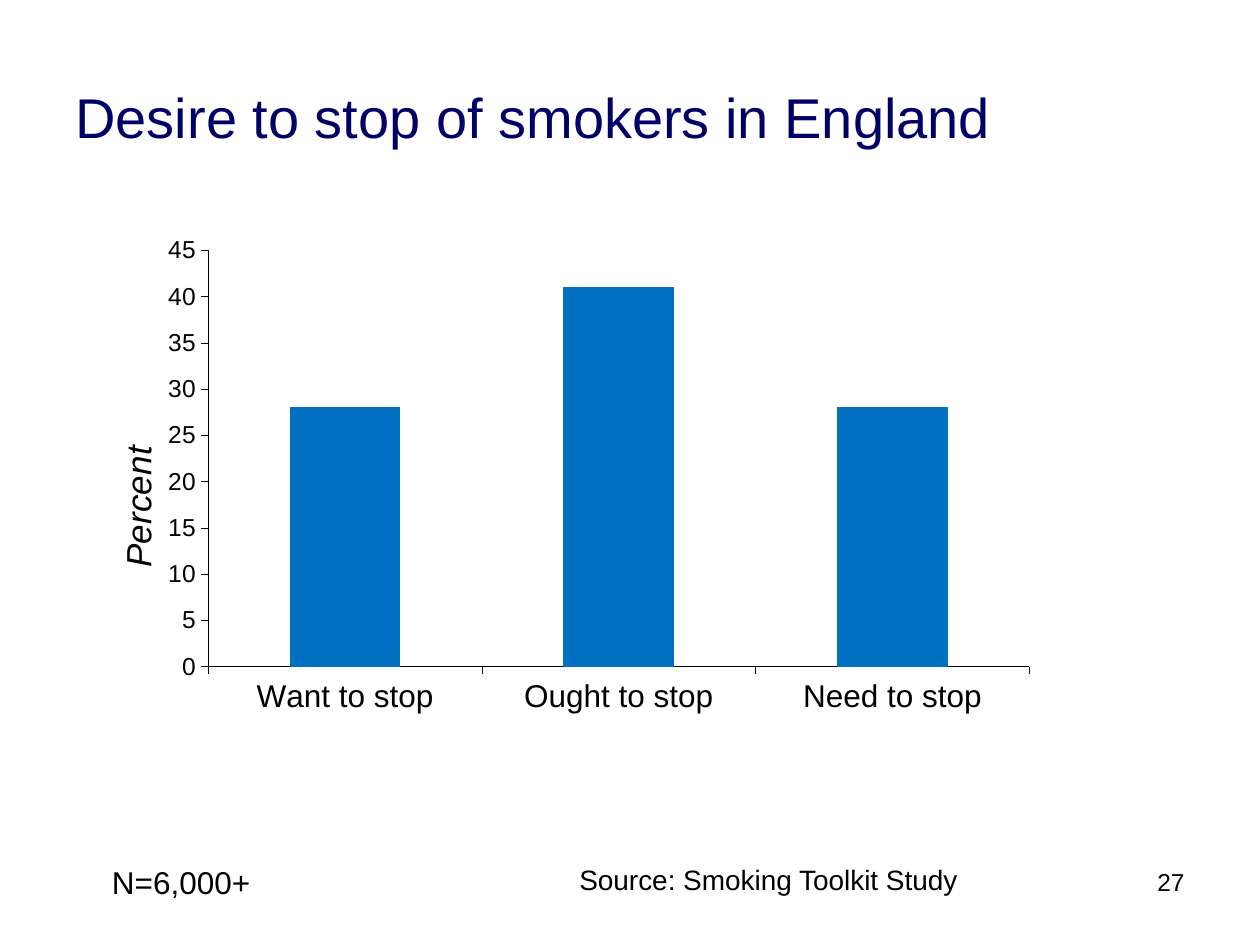
from dataclasses import dataclass

from lxml import etree
from pptx import Presentation
from pptx import util as u
from pptx.chart.data import CategoryChartData
from pptx.dml.color import RGBColor
from pptx.enum import chart as ch
from pptx.enum import text as tx
from pptx.oxml.ns import qn

HUES = {"ink": "000000", "navy": "000066", "bar": "0070C0"}
FACE = "Arial"


@dataclass
class Label:
    """A line of text with its box and style."""
    words: str
    box: tuple[float, float, float, float]
    size: float
    hue: str = "ink"
    align: tx.PP_ALIGN = tx.PP_ALIGN.LEFT
    anchor: tx.MSO_ANCHOR = tx.MSO_ANCHOR.TOP
    wrap: bool = False


LABELS = [
    Label("Desire to stop of smokers in England", (0.5, 0.3, 9.08, 1.25), 32,
          "navy", anchor=tx.MSO_ANCHOR.MIDDLE, wrap=True),
    Label("N=6,000+", (0.79, 6.8, 1.31, 0.4), 18),
    Label("Source: Smoking Toolkit Study", (4.5, 6.8, 3.24, 0.37), 16),
    Label("27", (6.73, 6.83, 2.77, 0.52), 14, align=tx.PP_ALIGN.RIGHT, wrap=True),
]


def color(hue: str) -> RGBColor:
    """Return the named colour."""
    return RGBColor.from_string(HUES[hue])


def style(font, size: float, hue: str = "ink", slant: bool = False) -> None:
    """Set face, size, colour and slant of a font."""
    font.name, font.size = FACE, u.Pt(size)
    font.bold, font.italic = False, slant
    font.color.rgb = color(hue)


def write(slide, label: Label) -> None:
    """Draw one label as a text box."""
    frame = slide.shapes.add_textbox(*map(u.Inches, label.box)).text_frame
    frame.word_wrap = label.wrap
    frame.vertical_anchor = label.anchor
    para = frame.paragraphs[0]
    para.alignment = label.align
    run = para.add_run()
    run.text = label.words
    style(run.font, label.size, label.hue)


def place(owner, index: int, **parts) -> None:
    """Give a chart part a manual layout."""
    old = owner.find(qn("c:layout"))
    if old is not None:
        owner.remove(old)
    layout = etree.Element(qn("c:layout"))
    manual = etree.SubElement(layout, qn("c:manualLayout"))
    for tag, val in parts.items():
        etree.SubElement(manual, qn(f"c:{tag}")).set("val", str(val))
    owner.insert(index, layout)


def rule(axis, size: float) -> None:
    """Style an axis line, its ticks and its labels."""
    axis.has_major_gridlines = False
    axis.major_tick_mark = ch.XL_TICK_MARK.OUTSIDE
    axis.minor_tick_mark = ch.XL_TICK_MARK.NONE
    axis.format.line.color.rgb = color("ink")
    axis.format.line.width = u.Pt(0.17)
    style(axis.tick_labels.font, size)


def plot(slide) -> None:
    """Draw the column chart."""
    data = CategoryChartData()
    data.categories = ["Want to stop", "Ought to stop", "Need to stop"]
    data.add_series("Series 1", (28, 41, 28))
    box = map(u.Inches, (0.79, 1.73, 7.85, 4.29))
    chart = slide.shapes.add_chart(ch.XL_CHART_TYPE.COLUMN_CLUSTERED, *box, data).chart
    chart.has_legend = chart.has_title = False
    style(chart.font, 12.6)
    bars = chart.plots[0]
    bars.gap_width = 150
    bars.vary_by_categories = False
    form = bars.series[0].format
    form.fill.solid()
    form.fill.fore_color.rgb = form.line.color.rgb = color("bar")
    form.line.width = u.Pt(0.7)
    rule(chart.category_axis, 18)
    axis = chart.value_axis
    rule(axis, 14)
    axis.minimum_scale, axis.maximum_scale, axis.major_unit = 0, 45, 5
    run = axis.axis_title.text_frame.paragraphs[0].add_run()
    run.text = "Percent"
    style(run.font, 20, slant=True)
    place(axis.axis_title._element, 1, xMode="edge", yMode="edge", x=0.01, y=0.41)
    area = chart._chartSpace.find(".//" + qn("c:plotArea"))
    place(area, 0, layoutTarget="inner", xMode="edge", yMode="edge",
          x=0.11, y=0.06, w=0.83, h=0.77)


def main() -> None:
    """Build the slide and save it."""
    deck = Presentation()
    deck.slide_width, deck.slide_height = u.Inches(10), u.Inches(7.5)
    slide = deck.slides.add_slide(deck.slide_layouts[6])
    plot(slide)
    for label in LABELS:
        write(slide, label)
    deck.save("out.pptx")


if __name__ == "__main__":
    main()
